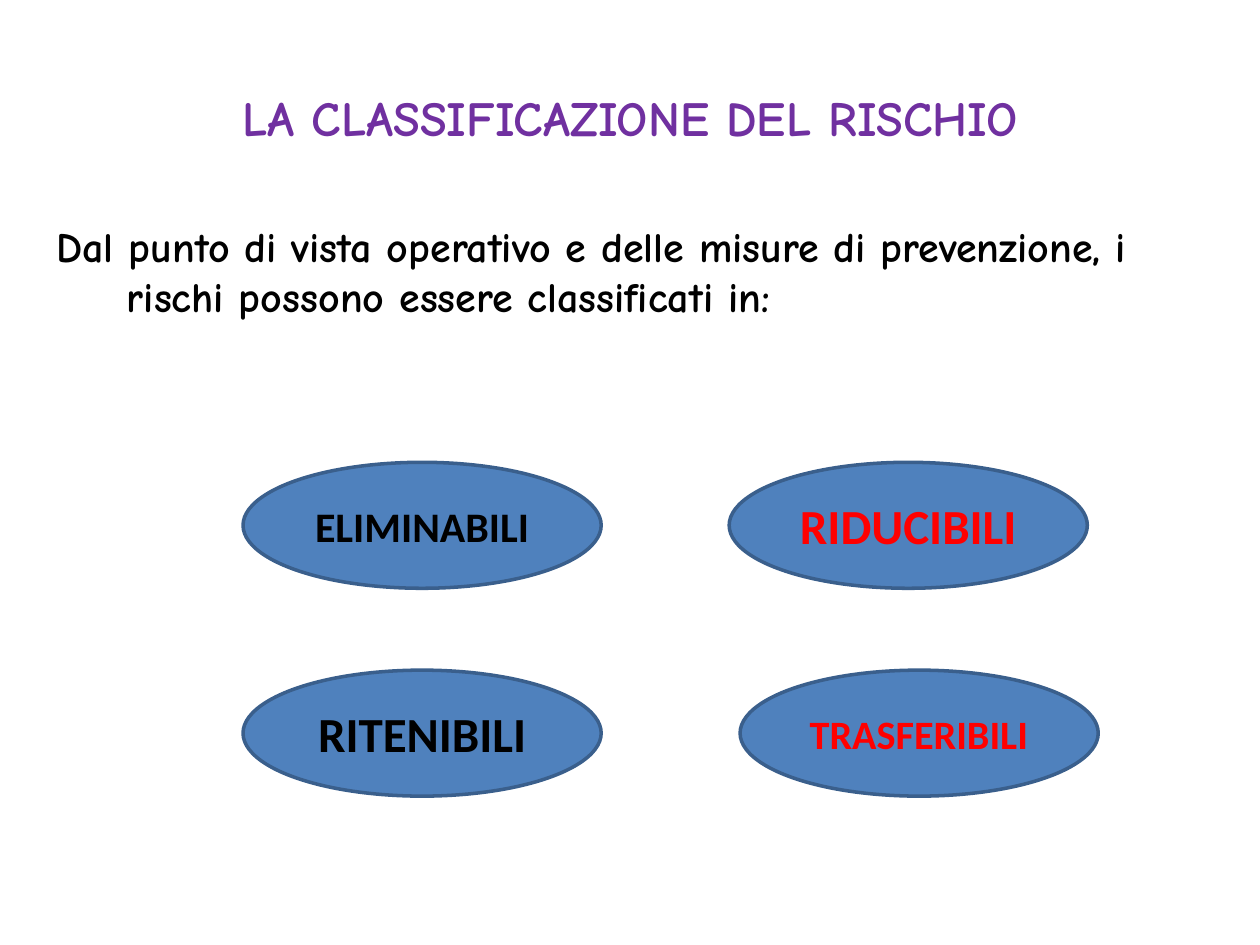
from dataclasses import dataclass

from pptx import Presentation
from pptx.dml.color import RGBColor
from pptx.enum.shapes import MSO_SHAPE
from pptx.enum.text import MSO_ANCHOR, PP_ALIGN
from pptx.util import Cm, Pt

# Content
HEADING = "LA CLASSIFICAZIONE DEL RISCHIO"
INTRO = ("Dal punto di vista operativo e delle misure di prevenzione, "
         "i rischi possono essere classificati in:")

# Risk classes by row: label, left edge in cm, type size, colour role
RISK_ROWS = [
    [("ELIMINABILI", 4.9, 24, "ink"), ("RIDUCIBILI", 14.7, 28, "accent")],
    [("RITENIBILI", 4.9, 28, "ink"), ("TRASFERIBILI", 14.92, 23, "accent")],
]
FIRST_ROW_TOP, ROW_STEP = 9.32, 4.19
OVAL_WIDTH, OVAL_HEIGHT = 7.22, 2.54


@dataclass(frozen=True)
class Theme:
    heading: str = "7030A0"
    ink: str = "000000"
    accent: str = "FF0000"
    oval: str = "4F81BD"
    outline: str = "3A5F8C"
    text_font: str = "Comic Neue"
    oval_font: str = "Calibri"
    heading_size: int = 28
    intro_size: int = 24


THEME = Theme()


def write(frame, text, font_name, size, color, align):
    frame.text = text
    frame.word_wrap = True
    paragraph = frame.paragraphs[0]
    paragraph.alignment = align
    font = paragraph.runs[0].font
    font.name, font.size, font.bold = font_name, Pt(size), True
    font.color.rgb = RGBColor.from_string(color)


def add_risk(slide, label, left, top, size, color):
    oval = slide.shapes.add_shape(MSO_SHAPE.OVAL, Cm(left), Cm(top),
                                  Cm(OVAL_WIDTH), Cm(OVAL_HEIGHT))
    oval.shadow.inherit = False
    oval.fill.solid()
    oval.fill.fore_color.rgb = RGBColor.from_string(THEME.oval)
    oval.line.color.rgb = RGBColor.from_string(THEME.outline)
    oval.line.width = Pt(2)
    oval.text_frame.vertical_anchor = MSO_ANCHOR.MIDDLE
    write(oval.text_frame, label, THEME.oval_font, size, color, PP_ALIGN.CENTER)


def main():
    prs = Presentation()
    prs.slide_width, prs.slide_height = Cm(25.4), Cm(19.05)
    slide = prs.slides.add_slide(prs.slide_layouts[5])

    # Title
    heading = slide.shapes.title
    heading.left, heading.top = Cm(1.27), Cm(0.76)
    heading.width, heading.height = Cm(22.86), Cm(3.18)
    heading.text_frame.vertical_anchor = MSO_ANCHOR.MIDDLE
    write(heading.text_frame, HEADING, THEME.text_font, THEME.heading_size,
          THEME.heading, PP_ALIGN.CENTER)

    # Introduction with hanging indent
    intro = slide.shapes.add_textbox(Cm(0.89), Cm(4.32), Cm(23.6), Cm(14))
    write(intro.text_frame, INTRO, THEME.text_font, THEME.intro_size,
          THEME.ink, PP_ALIGN.LEFT)
    indent = intro.text_frame.paragraphs[0]._p.get_or_add_pPr()
    indent.set("marL", str(Cm(1.42)))
    indent.set("indent", str(-Cm(1.42)))

    # Risk classes
    for row, risks in enumerate(RISK_ROWS):
        top = FIRST_ROW_TOP + row * ROW_STEP
        for label, left, size, role in risks:
            add_risk(slide, label, left, top, size, getattr(THEME, role))

    prs.save("out.pptx")


if __name__ == "__main__":
    main()
